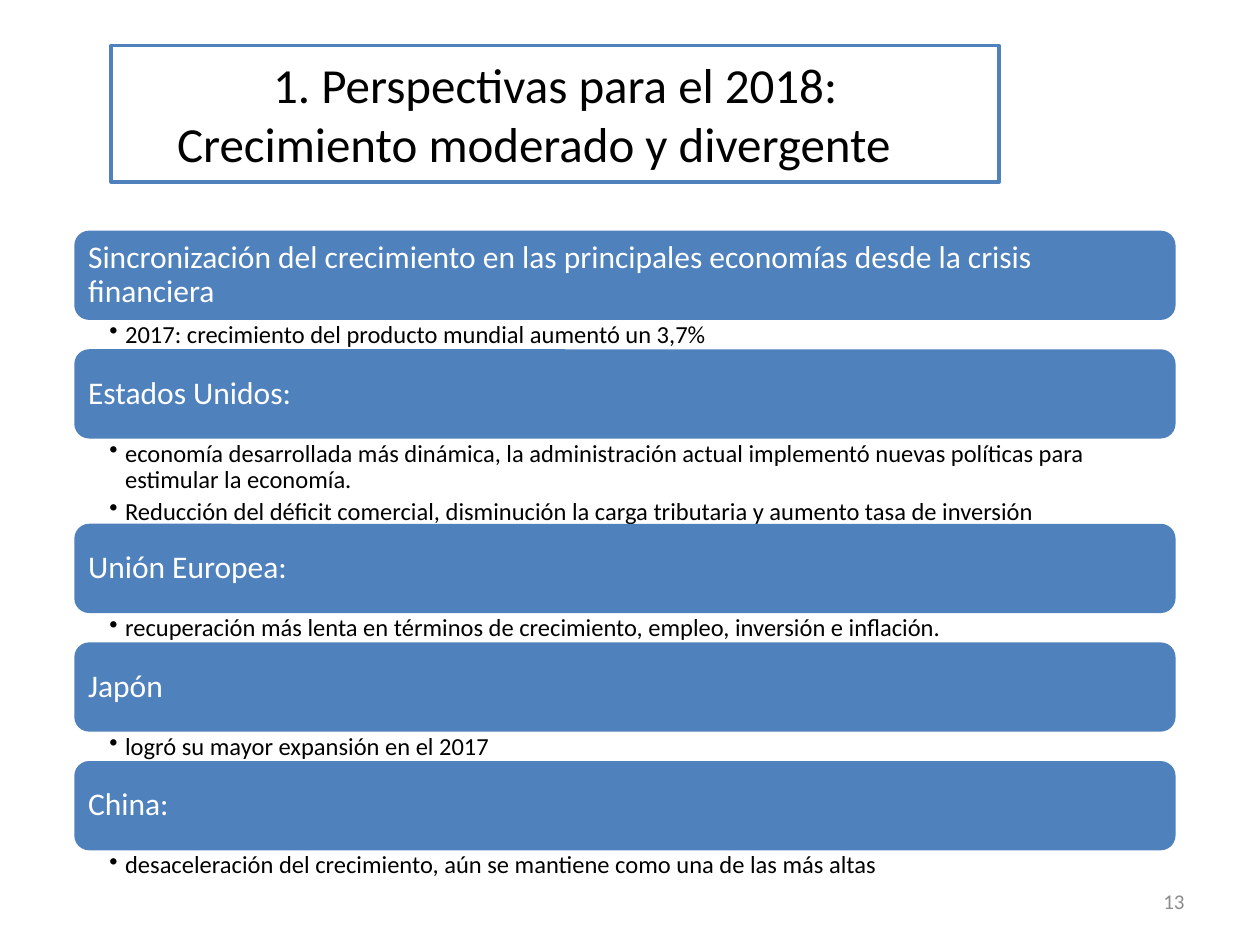
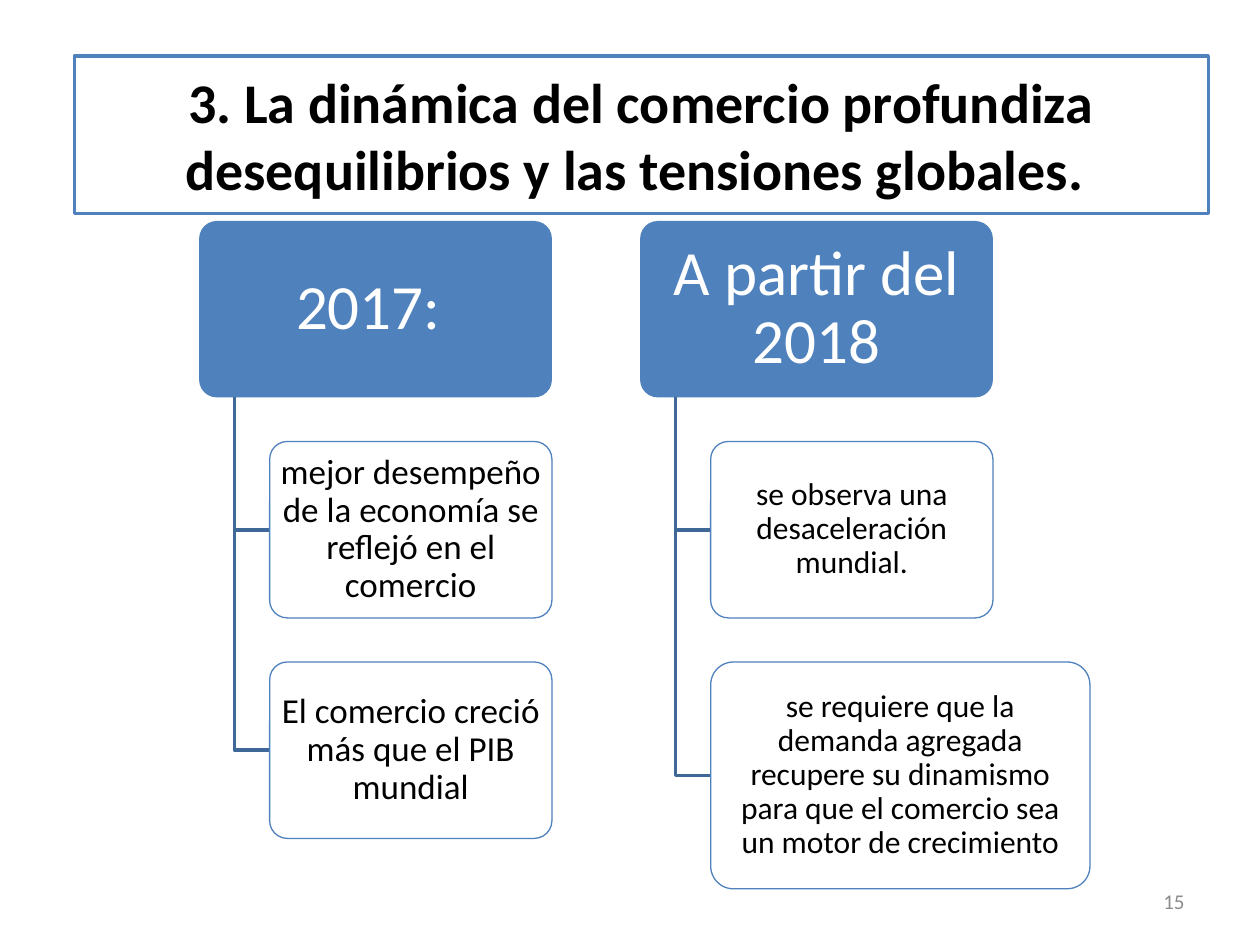
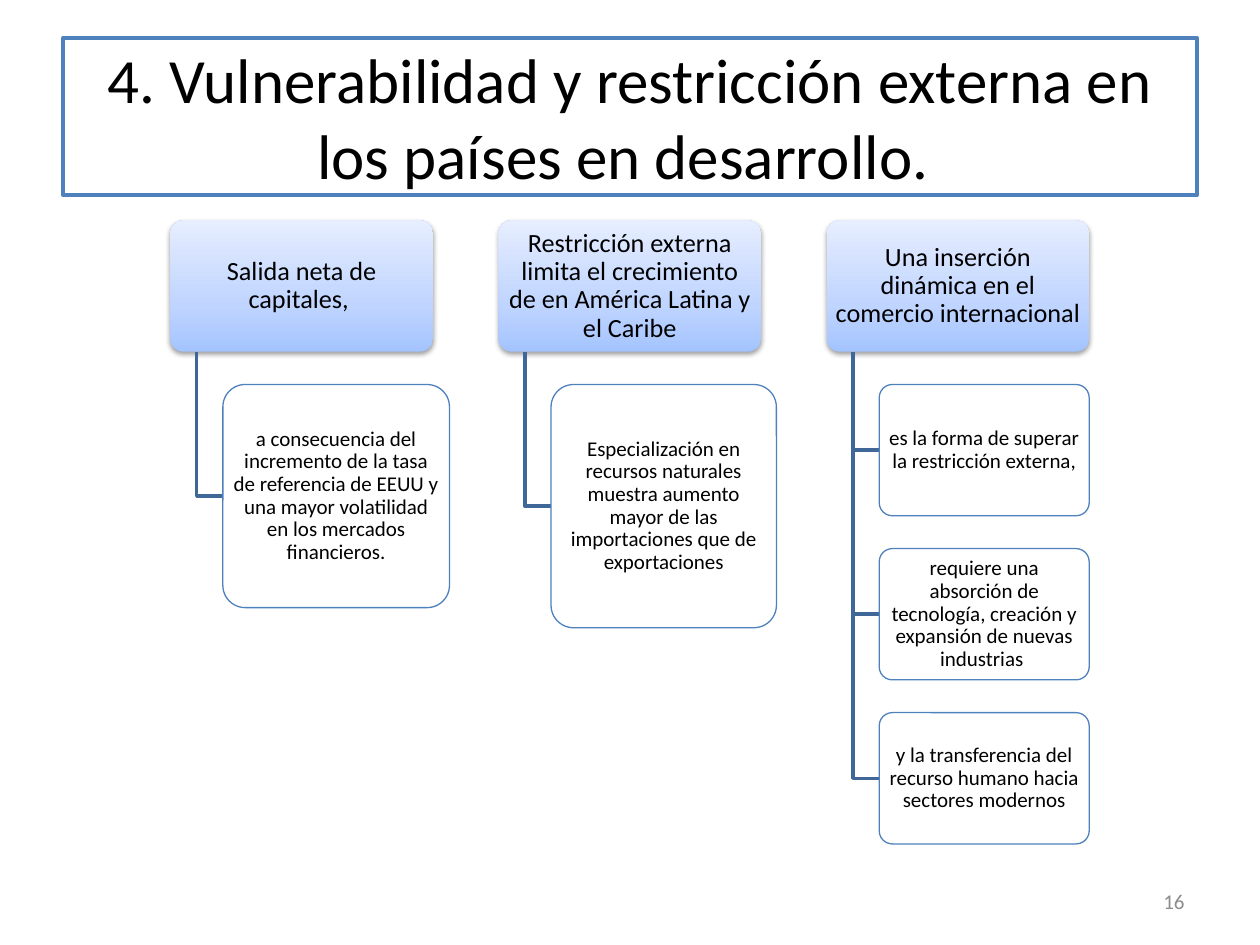
"""Builds three slides on world growth and trade: one banded list and two trees."""
from dataclasses import dataclass

from lxml import etree
from pptx import Presentation
from pptx.dml.color import RGBColor
from pptx.enum.shapes import MSO_SHAPE
from pptx.enum.text import MSO_ANCHOR, MSO_AUTO_SIZE, PP_ALIGN
from pptx.oxml import parse_xml
from pptx.oxml.ns import nsdecls, qn
from pptx.util import Pt

ROUND = MSO_SHAPE.ROUNDED_RECTANGLE
TOP, MID = MSO_ANCHOR.TOP, MSO_ANCHOR.MIDDLE
LEFT, MIDST, RIGHT = PP_ALIGN.LEFT, PP_ALIGN.CENTER, PP_ALIGN.RIGHT
NOFIT = MSO_AUTO_SIZE.NONE


@dataclass(frozen=True)
class Theme:
    font: str = "Calibri"
    blue: str = "4F81BD"
    dark: str = "3F6797"
    white: str = "FFFFFF"
    black: str = "000000"
    gray: str = "8C8C8C"
    fade: tuple = ((0, "A4C4FF"), (35, "BFD4FF"), (100, "E6EEFF"))
    band: int = 18
    item: int = 14
    foot: int = 12
    rule: float = 2
    thin: float = 0.75


LOOK = Theme()


def write(frame, lines, size, color, align=MIDST, anchor=MID, pads=(7.2, 3.6), lead=None, bold=False):
    """Fill a text frame with one paragraph per line."""
    frame.word_wrap = True
    frame.auto_size = NOFIT
    frame.vertical_anchor = anchor
    frame.margin_left = frame.margin_right = Pt(pads[0])
    frame.margin_top = frame.margin_bottom = Pt(pads[1])
    for i, line in enumerate(lines):
        para = frame.add_paragraph() if i else frame.paragraphs[0]
        para.alignment = align
        if lead:
            para.line_spacing = lead
        for j, part in enumerate(line.split("\n")):
            if j:
                para.add_line_break()
            run = para.add_run()
            run.text = part
            run.font.name = LOOK.font
            run.font.size = Pt(size)
            run.font.bold = bold
            run.font.color.rgb = RGBColor.from_string(color)


def panel(slide, x, y, w, h, fill, edge=None, curve=None):
    """Add a rounded panel with a plain fill."""
    shape = slide.shapes.add_shape(ROUND, Pt(x), Pt(y), Pt(w), Pt(h))
    shape.shadow.inherit = False
    if curve:
        shape.adjustments[0] = curve
    shape.fill.solid()
    shape.fill.fore_color.rgb = RGBColor.from_string(fill)
    if edge:
        shape.line.color.rgb = RGBColor.from_string(edge)
        shape.line.width = Pt(LOOK.thin)
    else:
        shape.line.fill.background()
    return shape


deck = Presentation()
deck.slide_width, deck.slide_height = Pt(720), Pt(540)

HEADS = [
    ("1. Perspectivas para el 2018:\nCrecimiento moderado y divergente\t", 28, False, (63.5, 26, 507.5, 78), "13"),
    ("3. La dinámica del comercio profundiza desequilibrios y las tensiones globales. ", 32, True,
     (42.5, 32, 648, 90), "15"),
    ("4. Vulnerabilidad y restricción externa en los países en desarrollo. ", 36, False,
     (36, 21.6, 648, 90), "16"),
]
slides = []
for text, size, bold, spot, page in HEADS:
    slide = deck.slides.add_slide(deck.slide_layouts[5])
    title = slide.shapes.title
    title.left, title.top, title.width, title.height = [Pt(v) for v in spot]
    title.fill.solid()
    title.fill.fore_color.rgb = RGBColor.from_string(LOOK.white)
    title.line.color.rgb = RGBColor.from_string(LOOK.blue)
    title.line.width = Pt(LOOK.rule)
    write(title.text_frame, [text], size, LOOK.black, bold=bold)
    foot = slide.shapes.add_textbox(Pt(516), Pt(500.5), Pt(168), Pt(28.75))
    write(foot.text_frame, [page], LOOK.foot, LOOK.gray, RIGHT)
    slides.append(slide)

BANDS = [
    ("Sincronización del crecimiento en las principales economías desde la crisis financiera", 16.8,
     ["2017: crecimiento del producto mundial aumentó un 3,7%"]),
    ("Estados Unidos:", 48.7,
     ["economía desarrollada más dinámica, la administración actual implementó nuevas políticas "
      "para estimular la economía.",
      "Reducción del déficit comercial, disminución la carga tributaria y aumento tasa de inversión"]),
    ("Unión Europea:", 16.8,
     ["recuperación más lenta en términos de crecimiento, empleo, inversión e inflación."]),
    ("Japón", 16.8, ["logró su mayor expansión en el 2017"]),
    ("China:", 16.8, ["desaceleración del crecimiento, aún se mantiene como una de las más altas"]),
]
x, y, wide, tall = 42.5, 131.8, 629.3, 51
for text, deep, items in BANDS:
    bar = panel(slides[0], x, y, wide, tall, LOOK.blue)
    write(bar.text_frame, [text], LOOK.band, LOOK.white, LEFT, pads=(5.4, 5.4), lead=0.9)
    y += tall
    notes = slides[0].shapes.add_textbox(Pt(x), Pt(y), Pt(wide), Pt(deep)).text_frame
    write(notes, items, LOOK.item, LOOK.black, LEFT, TOP, (8, 1.4), 0.9)
    notes.margin_left = Pt(20)
    for para in notes.paragraphs:
        para.level = 1
        para.space_after = Pt(2.8)
        props = para._p.get_or_add_pPr()
        props.set("marL", str(Pt(9)))
        props.set("indent", str(Pt(-9)))
        etree.SubElement(props, qn("a:buChar")).set("char", "•")
    y += deep

TREES = [
    (slides[1], 113.8, 126.3, 201.6, 36, False, [
        ("2017: ", 20, [
            ("mejor desempeño de la economía se reflejó en el comercio", None),
            ("El comercio creció más que el PIB mundial", None)]),
        ("A partir del 2018", 18, [
            ("se observa una desaceleración mundial.", None),
            ("se requiere que la demanda agregada recupere su dinamismo para que el comercio "
             "sea un motor de crecimiento", (216.7, 129.6))]),
    ]),
    (slides[2], 97.4, 126, 150, 15, True, [
        ("Salida neta de capitales, ", 12, [
            ("a consecuencia del incremento de la tasa de referencia de EEUU y una mayor "
             "volatilidad en los mercados financieros.", (129.5, 127.5))]),
        ("Restricción externa limita el crecimiento de en América Latina y el Caribe", 12, [
            ("Especialización en recursos naturales muestra aumento mayor de las importaciones "
             "que de exportaciones", (128.8, 139))]),
        ("Una inserción dinámica en el comercio internacional ", 12, [
            ("es la forma de superar la restricción externa,", None),
            ("requiere una absorción de tecnología, creación y expansión de nuevas industrias ", None),
            ("y la transferencia del recurso humano hacia sectores modernos", None)]),
    ]),
]
for slide, left, top, wide, big, soft, stems in TREES:
    tall = wide / 2
    for col, (text, small, leaves) in enumerate(stems):
        x = left + col * wide * 1.25
        head = panel(slide, x, top, wide, tall, LOOK.blue, curve=0.1)
        write(head.text_frame, [text], big, LOOK.black if soft else LOOK.white,
              pads=(big * 0.15, big * 0.1), lead=0.9)
        if soft:
            props = head._element.spPr
            stops = "".join(f'<a:gs pos="{at * 1000}"><a:srgbClr val="{tint}"/></a:gs>'
                            for at, tint in LOOK.fade)
            props.replace(props.find(qn("a:solidFill")), parse_xml(
                f'<a:gradFill {nsdecls("a")} rotWithShape="1"><a:gsLst>{stops}</a:gsLst>'
                '<a:lin ang="16200000" scaled="0"/></a:gradFill>'))
            props.find(qn("a:effectLst")).append(parse_xml(
                f'<a:outerShdw {nsdecls("a")} blurRad="{Pt(3.1)}" dist="{Pt(1.6)}" dir="5400000" '
                f'rotWithShape="0"><a:srgbClr val="{LOOK.black}"><a:alpha val="38000"/>'
                '</a:srgbClr></a:outerShdw>'))
        y = top + tall * 1.25
        for leaf, size in leaves:
            w, h = size or (wide * 0.8, tall)
            trunk, edge, mid = x + wide * 0.1, x + wide * 0.2, y + h / 2
            path = slide.shapes.build_freeform(Pt(trunk), Pt(top + tall))
            path.add_line_segments([(Pt(trunk), Pt(mid)), (Pt(edge), Pt(mid))], close=False)
            elbow = path.convert_to_shape()
            elbow.shadow.inherit = False
            elbow.fill.background()
            elbow.line.color.rgb = RGBColor.from_string(LOOK.dark)
            elbow.line.width = Pt(LOOK.rule)
            card = panel(slide, edge, y, w, h, LOOK.white, LOOK.blue, 0.1)
            tint = card._element.spPr.find(qn("a:solidFill")).find(qn("a:srgbClr"))
            etree.SubElement(tint, qn("a:alpha")).set("val", "90000")
            write(card.text_frame, [leaf], small, LOOK.black,
                  pads=(small * 0.15, small * 0.1), lead=0.9)
            y += h + tall / 4

deck.save("out.pptx")
